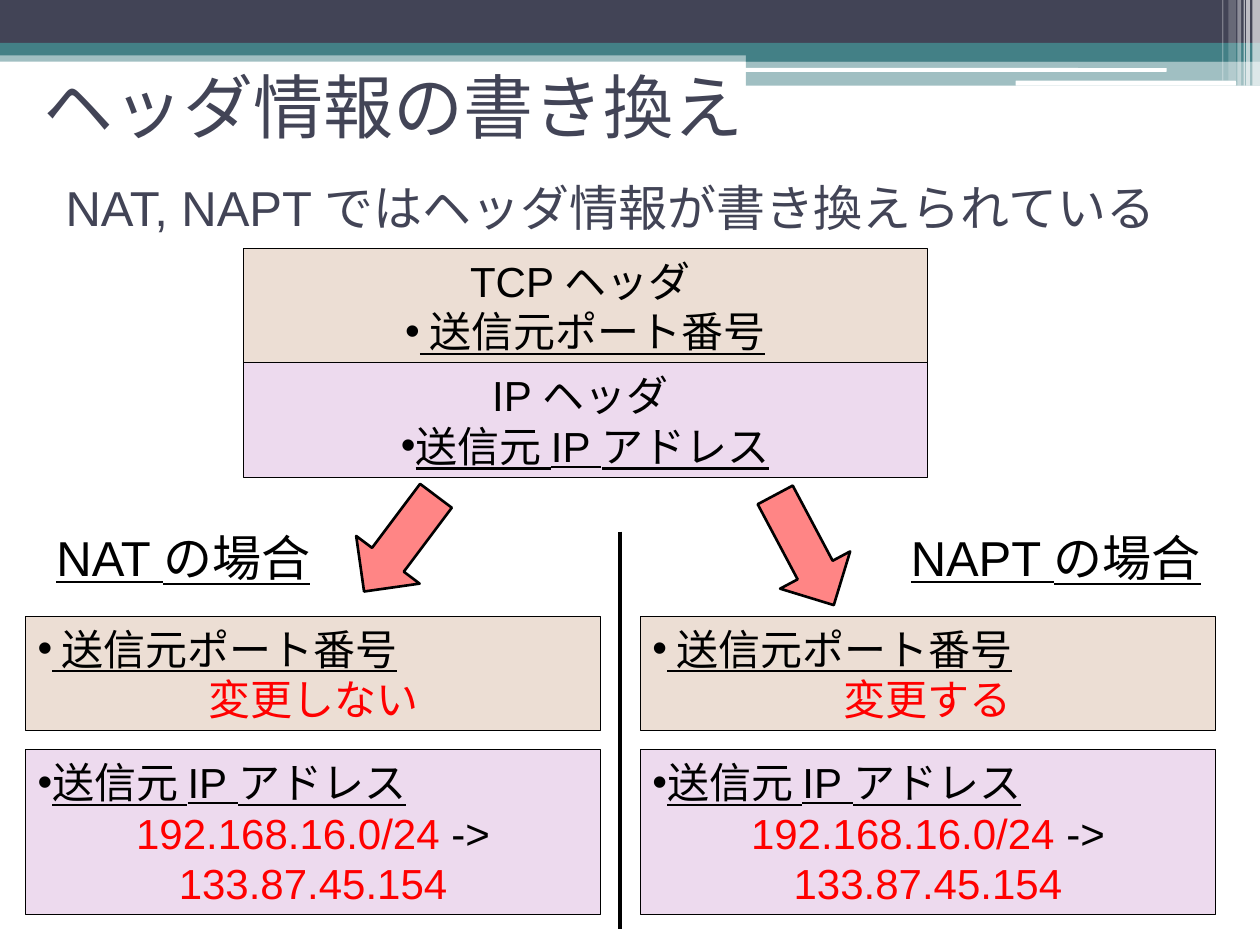
"""Build a slide on how NAT and NAPT rewrite header information."""
from dataclasses import dataclass

from lxml.etree import SubElement
from pptx import Presentation
from pptx.dml.color import RGBColor
from pptx.enum.shapes import MSO_CONNECTOR, MSO_SHAPE
from pptx.enum.text import MSO_ANCHOR, PP_ALIGN
from pptx.oxml.ns import qn
from pptx.util import Inches, Pt

FONT = "Arial"
BLACK = RGBColor(0x00, 0x00, 0x00)
WHITE = RGBColor(0xFF, 0xFF, 0xFF)
RED = RGBColor(0xFF, 0x00, 0x00)
NAVY = RGBColor(0x42, 0x44, 0x56)
TEAL = RGBColor(0x43, 0x80, 0x86)
BEIGE = RGBColor(0xEC, 0xDE, 0xD4)
LILAC = RGBColor(0xED, 0xDA, 0xEE)
PINK = RGBColor(0xFF, 0x85, 0x85)

PORT = " 送信元ポート番号"
ADDRESS = "送信元 IP アドレス"


@dataclass(frozen=True)
class Box:
    left: float
    top: float
    width: float
    height: float

    def lengths(self) -> list:
        return [Inches(side) for side in (self.left, self.top, self.width, self.height)]


@dataclass(frozen=True)
class Band:
    box: Box
    color: RGBColor
    opacity: int = 100
    rounded: bool = False


@dataclass(frozen=True)
class Piece:
    text: str
    color: RGBColor = BLACK
    underline: bool = False


@dataclass(frozen=True)
class Line:
    pieces: tuple
    centered: bool = True
    bullet: bool = False


@dataclass(frozen=True)
class Case:
    left: float
    label: str
    label_box: Box
    port_change: str
    arrow_box: Box
    arrow_turn: float


BANDS = (
    Band(Box(0, 0.4, 10, 0.09), TEAL, 50),
    Band(Box(0, 0, 10, 0.34), NAVY),
    Band(Box(0, 0.34, 10, 0.1), TEAL),
    Band(Box(5.92, 0.39, 4.08, 0.1), TEAL),
    Band(Box(5.92, 0.48, 4.08, 0.2), TEAL, 50),
    Band(Box(5.91, 0.54, 3.35, 0.03), WHITE, rounded=True),
    Band(Box(8.06, 0.64, 1.75, 0.04), WHITE, rounded=True),
    Band(Box(9.94, 0, 0.06, 0.68), WHITE, 65),
    Band(Box(9.89, 0, 0.03, 0.68), WHITE, 65),
    Band(Box(9.87, 0, 0.01, 0.68), WHITE, 60),
    Band(Box(9.82, 0, 0.03, 0.68), WHITE, 40),
    Band(Box(9.75, 0, 0.06, 0.64), WHITE, 20),
    Band(Box(9.7, 0, 0.01, 0.64), WHITE, 30),
)
CASES = (
    Case(0.2, "NAT の場合", Box(0.35, 4.14, 2.36, 0.57), "変更しない",
         Box(2.86, 3.84, 0.63, 0.95), 36.9),
    Case(5.08, "NAPT の場合", Box(7.13, 4.14, 2.62, 0.57), "変更する",
         Box(6.07, 3.87, 0.63, 0.99), 332),
)


def add_filled(slide, kind, box: Box, color: RGBColor, outline: float = 0):
    shape = slide.shapes.add_shape(kind, *box.lengths())
    shape.shadow.inherit = False
    shape.fill.solid()
    shape.fill.fore_color.rgb = color
    if outline:
        shape.line.color.rgb = BLACK
        shape.line.width = Pt(outline)
    else:
        shape.line.fill.background()
    return shape


def add_band(slide, band: Band) -> None:
    kind = MSO_SHAPE.ROUNDED_RECTANGLE if band.rounded else MSO_SHAPE.RECTANGLE
    shape = add_filled(slide, kind, band.box, band.color)
    if band.opacity < 100:
        fill_color = shape.fill._xPr.find(qn("a:solidFill"))[0]
        SubElement(fill_color, qn("a:alpha"), val=str(band.opacity * 1000))


def format_run(run, size: float, color: RGBColor, underline: bool = False) -> None:
    run.font.name = FONT
    run.font.size = Pt(size)
    run.font.color.rgb = color
    run.font.underline = underline


def add_bullet(paragraph) -> None:
    properties = paragraph._p.get_or_add_pPr()
    properties.set("marL", "0")
    properties.set("indent", "0")
    SubElement(properties, qn("a:buFont"), typeface=FONT)
    SubElement(properties, qn("a:buChar"), char="•")


def add_header(slide, box: Box, color: RGBColor, lines: list) -> None:
    frame = add_filled(slide, MSO_SHAPE.RECTANGLE, box, color, 0.5).text_frame
    frame.word_wrap = True
    for index, line in enumerate(lines):
        paragraph = frame.add_paragraph() if index else frame.paragraphs[0]
        paragraph.alignment = PP_ALIGN.CENTER if line.centered else PP_ALIGN.LEFT
        if line.bullet:
            add_bullet(paragraph)
        for piece in line.pieces:
            run = paragraph.add_run()
            run.text = piece.text
            format_run(run, 24, piece.color, piece.underline)


def field(text: str, centered: bool) -> Line:
    return Line((Piece(text, underline=True),), centered, bullet=True)


def write_heading(shape, text: str, size: float, color: RGBColor, anchor,
                  underline: bool = False, wrap: bool = True) -> None:
    frame = shape.text_frame
    frame.text = text
    frame.word_wrap = wrap
    frame.vertical_anchor = anchor
    frame.paragraphs[0].alignment = PP_ALIGN.LEFT
    format_run(frame.paragraphs[0].runs[0], size, color, underline)


def add_case(slide, case: Case) -> None:
    arrow = add_filled(slide, MSO_SHAPE.DOWN_ARROW, case.arrow_box, PINK, 1.5)
    arrow.rotation = case.arrow_turn
    label = slide.shapes.add_textbox(*case.label_box.lengths())
    write_heading(label, case.label, 28, BLACK, MSO_ANCHOR.TOP, underline=True, wrap=False)
    add_header(slide, Box(case.left, 4.89, 4.57, 0.91), BEIGE,
               [field(PORT, False), Line((Piece(case.port_change, RED),))])
    rewrite = (Piece("192.168.16.0/24", RED), Piece(" -> "), Piece("133.87.45.154", RED))
    add_header(slide, Box(case.left, 5.95, 4.57, 1.31), LILAC,
               [field(ADDRESS, False), Line(rewrite)])


def add_divider(slide) -> None:
    divider = slide.shapes.add_connector(
        MSO_CONNECTOR.STRAIGHT, Inches(4.92), Inches(4.22), Inches(4.92), Inches(7.37))
    divider.line.color.rgb = BLACK
    divider.line.width = Pt(2)
    SubElement(divider._element.spPr, qn("a:effectLst"))


def main() -> None:
    presentation = Presentation()
    presentation.slide_width, presentation.slide_height = Inches(10), Inches(7.5)
    slide = presentation.slides.add_slide(presentation.slide_layouts[5])
    for band in BANDS:
        add_band(slide, band)

    title = slide.shapes.title
    title.left, title.top, title.width, title.height = Box(0.42, 1.31, 9, 0.67).lengths()
    write_heading(title, "NAT, NAPT ではヘッダ情報が書き換えられている", 28, NAVY, MSO_ANCHOR.MIDDLE)
    topic = slide.shapes.add_textbox(*Box(0.25, 0.25, 9, 1.17).lengths())
    write_heading(topic, "ヘッダ情報の書き換え", 40, NAVY, MSO_ANCHOR.MIDDLE)

    add_header(slide, Box(1.93, 1.97, 5.43, 0.91), BEIGE,
               [Line((Piece("TCP ヘッダ "),)), field(PORT, True)])
    add_header(slide, Box(1.93, 2.88, 5.43, 0.91), LILAC,
               [Line((Piece("IP ヘッダ "),)), field(ADDRESS, True)])
    add_divider(slide)
    for case in CASES:
        add_case(slide, case)
    presentation.save("out.pptx")


if __name__ == "__main__":
    main()
